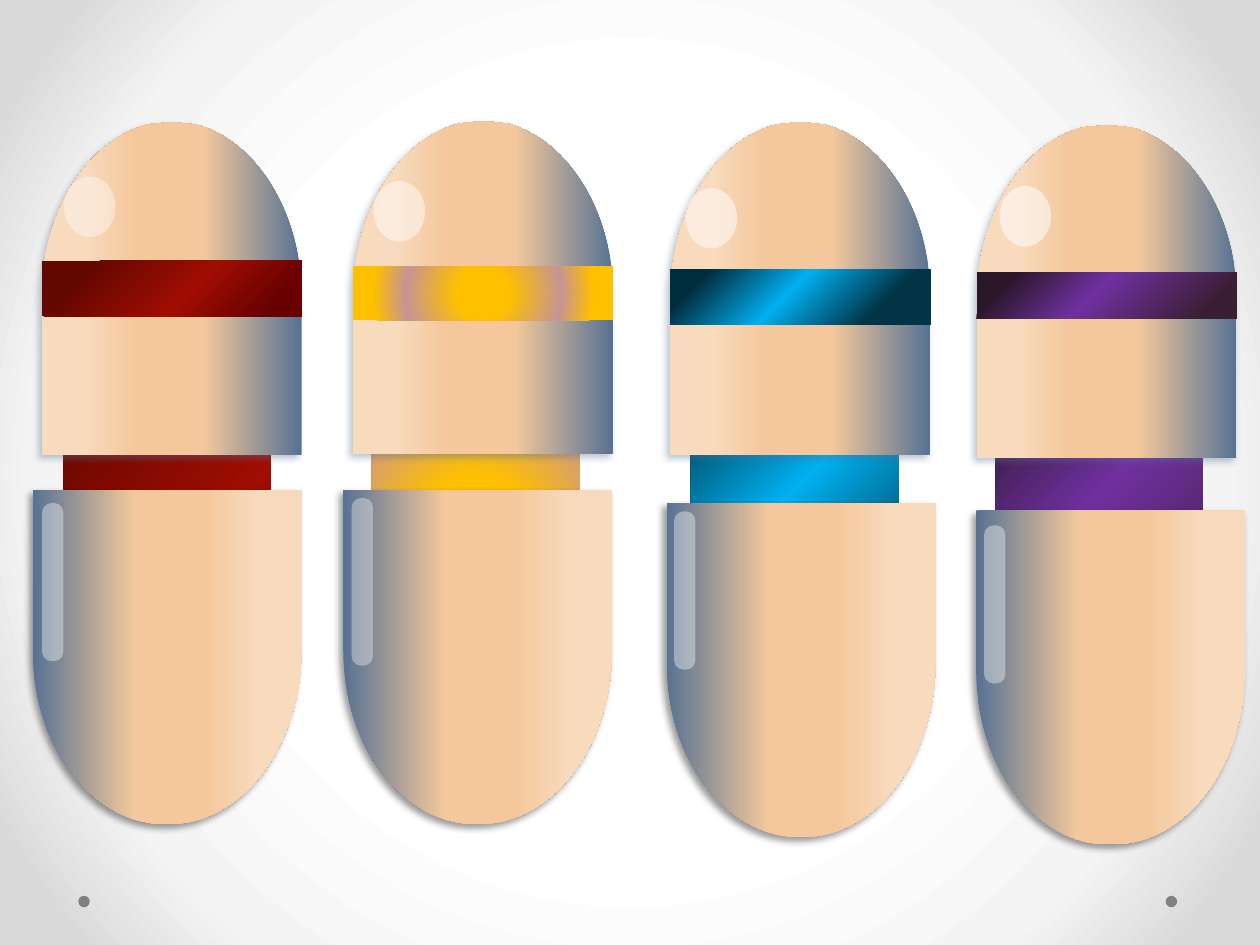
from lxml.etree import SubElement
from pptx import Presentation
from pptx.dml.color import RGBColor
from pptx.enum.shapes import MSO_SHAPE
from pptx.oxml.ns import qn
from pptx.util import Cm, Pt

WHITE = RGBColor(0xFF, 0xFF, 0xFF)
PALE = RGBColor(0xF4, 0xF4, 0xF4)
SILVER = RGBColor(0xDA, 0xDA, 0xDA)
GREY = RGBColor(0x80, 0x80, 0x80)
BLACK = RGBColor(0, 0, 0)
STEEL = RGBColor(0x57, 0x72, 0x93)
SKIN = RGBColor(0xF4, 0xC8, 0x9C)
LIGHT = RGBColor(0xF8, 0xDA, 0xBD)
GOLD = RGBColor(0xFF, 0xC0, 0x00)

# Gradient stops: percent and colour
BACK = [(50, WHITE), (76, PALE), (92, SILVER)]
CASE = [(0, STEEL), (38, SKIN), (64, SKIN), (84, LIGHT)]
RED = [(12, RGBColor(0x68, 0, 0)), (43, RGBColor(0xA0, 0x0D, 0x02)),
       (83, RGBColor(0x63, 0x08, 0x01))]
YELLOW = [(20, GOLD), (59, RGBColor(0xC7, 0x94, 0x94)), (83, GOLD)]
BLUE = [(21, RGBColor(0, 0x34, 0x46)), (55, RGBColor(0, 0xB0, 0xF0)),
        (87, RGBColor(0, 0x2E, 0x3E))]
PURPLE = [(12, RGBColor(0x3A, 0x1E, 0x34)), (55, RGBColor(0x70, 0x30, 0xA0)),
          (87, RGBColor(0x2B, 0x17, 0x2A))]

CENTRE = (50, 50, 50, 50)
CORNER = (100, 100, 0, 0)

# Sizes in cm
CAP_W, CAP_H = 5.24, 6.71
BODY_W, BODY_H = 5.42, 6.73
DOME = 3.53
STEM_W, STEM_H = 4.18, 9.42

# Dome curves, lying on one side: two handles, the end, and a tip if any
CAP_ARC = [(1.83, 0), (0.38, 0.91), (0.05, 2.13)]
CAP_TIP = [(0, CAP_W / 2)]
BODY_ARC = [(1.57, 0), (0, 1.19), (0, 2.66)]

# Each tube, in cm: stem, cap, band (top, height), gloss (x, y, alpha),
# body, streak (x, top, height, alpha)
TUBES = [
    dict(tint=RED, focus=CORNER, stem=(1.28, 5.87), cap=(0.84, 2.46),
         band=(5.26, 1.12), gloss=(1.29, 3.56, 40),
         body=(0.66, 9.88), streak=(0.85, 10.14, 3.19, 38)),
    dict(tint=YELLOW, focus=CENTRE, stem=(7.5, 5.92), cap=(7.12, 2.44),
         band=(5.37, 1.09), gloss=(7.53, 3.65, 48),
         body=(6.92, 9.88), streak=(7.09, 10.04, 3.38, 35)),
    dict(tint=BLUE, focus=CORNER, stem=(13.93, 5.82), cap=(13.51, 2.46),
         band=(5.43, 1.12), gloss=(13.82, 3.79, 51),
         body=(13.44, 10.14), streak=(13.59, 10.31, 3.19, 38)),
    dict(tint=PURPLE, focus=CORNER, stem=(20.06, 5.92), cap=(19.69, 2.52),
         band=(5.49, 0.94), gloss=(20.15, 3.75, 53),
         body=(19.68, 10.29), streak=(19.84, 10.59, 3.19, 38)),
]


def add(node, tag, **attrs):
    return SubElement(node, qn(tag), {k: str(v) for k, v in attrs.items()})


def blend(fill, root, stops, focus=None):
    """Gradient fill: top to bottom, or round a focus."""
    fill.gradient()
    grad = root.find(".//" + qn("a:gradFill"))
    for child in list(grad):
        grad.remove(child)
    group = add(grad, "a:gsLst")
    for pos, color in stops:
        add(add(group, "a:gs", pos=pos * 1000), "a:srgbClr", val=color)
    if focus:
        sides = {k: v * 1000 for k, v in zip("ltrb", focus)}
        add(add(grad, "a:path", path="circle"), "a:fillToRect", **sides)
    else:
        add(grad, "a:lin", ang=90 * 60000, scaled=0)


def paint(shape, color=None, alpha=100, stops=None, focus=None):
    shape.shadow.inherit = False
    shape.line.fill.background()
    if stops:
        blend(shape.fill, shape._element, stops, focus)
        return
    shape.fill.solid()
    shape.fill.fore_color.rgb = color
    if alpha < 100:
        tone = shape._element.spPr.find(".//" + qn("a:srgbClr"))
        add(tone, "a:alpha", val=alpha * 1000)


def block(shapes, kind, x, y, w, h, **look):
    shape = shapes.add_shape(kind, Cm(x), Cm(y), Cm(w), Cm(h))
    paint(shape, **look)
    return shape


def bend(line, dots):
    """Turn a straight segment into a curve through two handles."""
    curve = line.makeelement(qn("a:cubicBezTo"))
    for x, y in dots:
        add(curve, "a:pt", x=Cm(x), y=Cm(y))
    line.getparent().replace(line, curve)


def dome(shapes, x, y, w, h, arc, tip, shade, turn):
    """Block with a domed end: drawn lying down, then turned upright."""
    left, high = x + (w - h) / 2, y + (h - w) / 2
    near = arc + [(DOME, 0)]
    far = [(u, w - v) for u, v in arc]
    dots = [(h, 0), (h, w), (DOME, w), far[-1], *tip, arc[-1], near[-1]]
    pen = shapes.build_freeform(Cm(left + DOME), Cm(high))
    pen.add_line_segments([(Cm(left + u), Cm(high + v)) for u, v in dots],
                          close=True)
    shape = pen.convert_to_shape()
    lines = shape._element.findall(".//" + qn("a:lnTo"))
    bend(lines[3], far)
    bend(lines[-1], [arc[1], arc[0], near[-1]])
    shape.rotation = turn
    paint(shape, stops=CASE)
    glow = add(shape._element.spPr.find(qn("a:effectLst")), "a:outerShdw",
               blurRad=Pt(4), dist=Pt(3), dir=135 * 60000,
               algn="tr", rotWithShape=0)
    add(add(glow, "a:srgbClr", val=shade), "a:alpha", val=40000)


def top(shapes, tube):
    x, y = tube["cap"]
    dome(shapes, x, y, CAP_W, CAP_H, CAP_ARC, CAP_TIP, STEEL, 90)
    band, tall = tube["band"]
    block(shapes, MSO_SHAPE.RECTANGLE, x, band, CAP_W, tall,
          stops=tube["tint"], focus=tube["focus"])
    left, high, alpha = tube["gloss"]
    block(shapes, MSO_SHAPE.OVAL, left, high, 1.04, 1.22,
          color=WHITE, alpha=alpha)


def base(shapes, tube):
    x, y = tube["body"]
    dome(shapes, x, y, BODY_W, BODY_H, BODY_ARC, [], BLACK, 270)
    left, high, tall, alpha = tube["streak"]
    streak = block(shapes, MSO_SHAPE.ROUNDED_RECTANGLE, left, high,
                   0.43, tall, color=WHITE, alpha=alpha)
    streak.adjustments[0] = 0.44


def main():
    deck = Presentation()
    deck.slide_width, deck.slide_height = Cm(25.4), Cm(19.05)
    slide = deck.slides.add_slide(deck.slide_layouts[6])
    shapes = slide.shapes
    blend(slide.background.fill, slide._element, BACK, CENTRE)

    # Corner dots belong to the slide master
    for x in (23.5, 1.58):
        dot = block(shapes, MSO_SHAPE.OVAL, x, 18.06, 0.23, 0.23, color=GREY)
        deck.slide_master.shapes._spTree.append(dot._element)

    # Coloured stems behind the caps and bodies
    for tube in TUBES:
        block(shapes, MSO_SHAPE.RECTANGLE, *tube["stem"], STEM_W, STEM_H,
              stops=tube["tint"], focus=tube["focus"])

    # Caps, then bodies, each as a group
    for part in (top, base):
        for tube in TUBES:
            part(shapes.add_group_shape().shapes, tube)

    deck.save("out.pptx")


if __name__ == "__main__":
    main()
